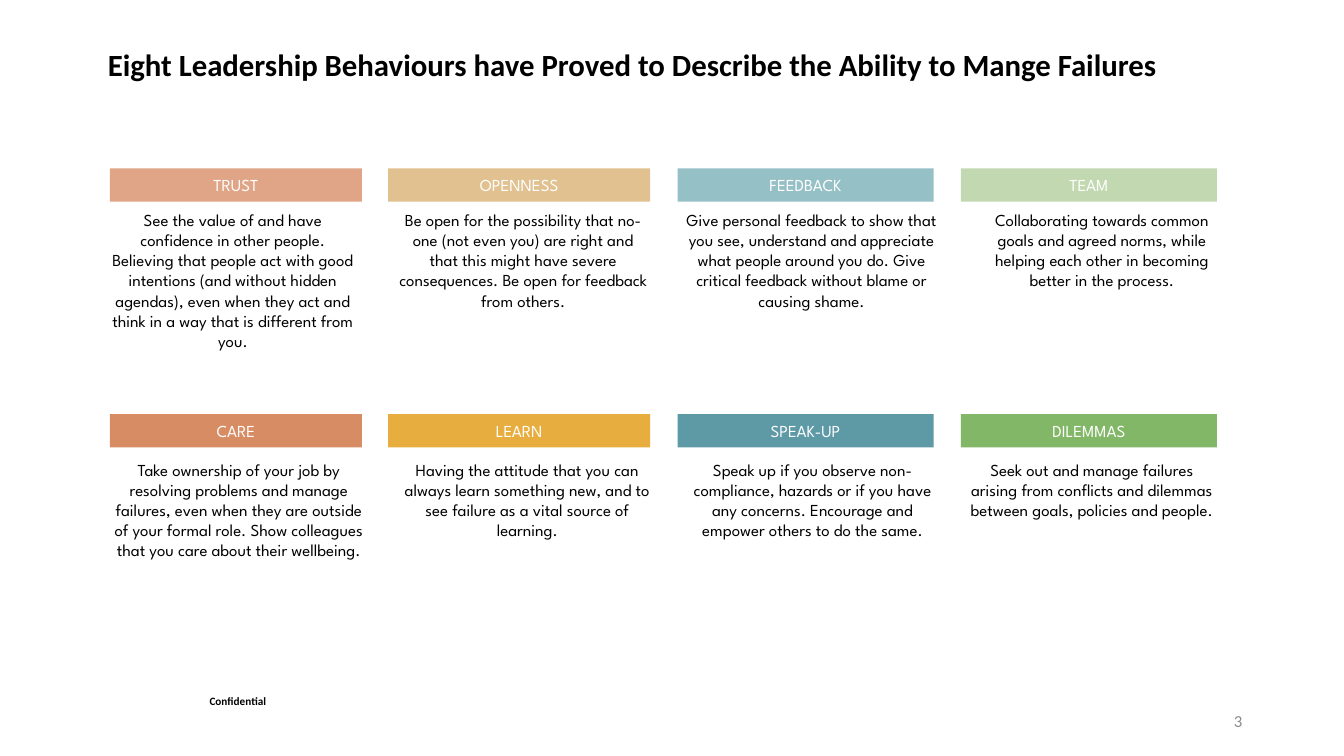
import pptx
import pptx.dml.color
import pptx.enum.shapes
import pptx.enum.text
import pptx.util

Inches = pptx.util.Inches
ALIGN = pptx.enum.text.PP_ALIGN
ANCHOR = pptx.enum.text.MSO_ANCHOR

TITLE = "Eight Leadership Behaviours have Proved to Describe the Ability to Mange Failures"
BODY_FONT = "League Spartan"
BODY_WIDTH = 2.68
HEADER_HEIGHT = 0.33

COLUMNS = [(1.09, 2.5), (3.85, 2.6), (6.72, 2.54), (9.53, 2.54)]  # header left, width

# Each row: header top, text top, text height, then (name, colour, text left, text)
ROWS = [
    (1.67, 2.03, 1.51, [
        ("TRUST", "E0A587", 0.97,
         "See the value of and have confidence in other people. Believing that people act "
         "with good intentions (and without hidden agendas), even when they act and think "
         "in a way that is different from you."),
        ("OPENNESS", "E1C190", 3.85,
         "Be open for the possibility that no-one (not even you) are right and that this "
         "might have severe consequences. Be open for feedback from others."),
        ("FEEDBACK", "95C0C6", 6.71,
         "Give personal feedback to show that you see, understand and appreciate what people "
         "around you do. Give critical feedback without blame or causing shame."),
        ("TEAM", "C2D8B1", 9.59,
         "Collaborating towards common goals and agreed norms, while helping each other in "
         "becoming better in the process."),
    ]),
    (4.11, 4.51, 1.11, [
        ("CARE", "D78C63", 1.03,
         "Take ownership of your job by resolving problems and manage failures, even when "
         "they are outside of your formal role. Show colleagues that you care about their "
         "wellbeing."),
        ("LEARN", "E7AE3F", 3.89,
         "Having the attitude that you can always learn something new, and to see failure "
         "as a vital source of learning."),
        ("SPEAK-UP", "5E99A6", 6.72,
         "Speak up if you observe non-compliance, hazards or if you have any concerns. "
         "Encourage and empower others to do the same."),
        ("DILEMMAS", "82B767", 9.49,
         "Seek out and manage failures arising from conflicts and dilemmas between goals, "
         "policies and people."),
    ]),
]


def colour(hex_string):
    return pptx.dml.color.RGBColor.from_string(hex_string)


def write(shape, text, size, font=BODY_FONT, ink="000000", bold=False,
          align=ALIGN.CENTER, anchor=ANCHOR.TOP):
    frame = shape.text_frame
    frame.word_wrap = True
    frame.auto_size = pptx.enum.text.MSO_AUTO_SIZE.NONE
    frame.vertical_anchor = anchor
    paragraph = frame.paragraphs[0]
    paragraph.alignment = align
    run = paragraph.add_run()
    run.text = text
    run.font.size = pptx.util.Pt(size)
    run.font.name = font
    run.font.bold = bold
    run.font.color.rgb = colour(ink)


def add_text(slide, box, text, size, **style):
    write(slide.shapes.add_textbox(*map(Inches, box)), text, size, **style)


def add_header(slide, box, name, fill):
    shape = slide.shapes.add_shape(
        pptx.enum.shapes.MSO_SHAPE.RECTANGLE, *map(Inches, box))
    shape.shadow.inherit = False
    shape.fill.solid()
    shape.fill.fore_color.rgb = colour(fill)
    shape.line.fill.background()
    write(shape, name, 12, ink="FFFFFF", anchor=ANCHOR.MIDDLE)


def main():
    presentation = pptx.Presentation()
    presentation.slide_width = Inches(13.33)
    presentation.slide_height = Inches(7.5)
    slide = presentation.slides.add_slide(presentation.slide_layouts[5])

    title = slide.shapes.title
    title.left, title.top, title.width, title.height = map(Inches, (0.97, 0.4, 11.61, 0.47))
    write(title, TITLE, 22, font="Calibri", bold=True, align=ALIGN.LEFT)

    for header_top, text_top, text_height, behaviours in ROWS:
        for (left, width), (name, fill, text_left, text) in zip(COLUMNS, behaviours):
            add_header(slide, (left, header_top, width, HEADER_HEIGHT), name, fill)
            add_text(slide, (text_left, text_top, BODY_WIDTH, text_height), text, 12)

    add_text(slide, (1.98, 6.84, 1.77, 0.24), "Confidential", 8,
             font="Calibri", bold=True, align=ALIGN.LEFT)
    add_text(slide, (9.42, 6.95, 3, 0.4), "3", 12, font="Calibri", ink="8C8C8C",
             align=ALIGN.RIGHT, anchor=ANCHOR.MIDDLE)
    presentation.save("out.pptx")


if __name__ == "__main__":
    main()
